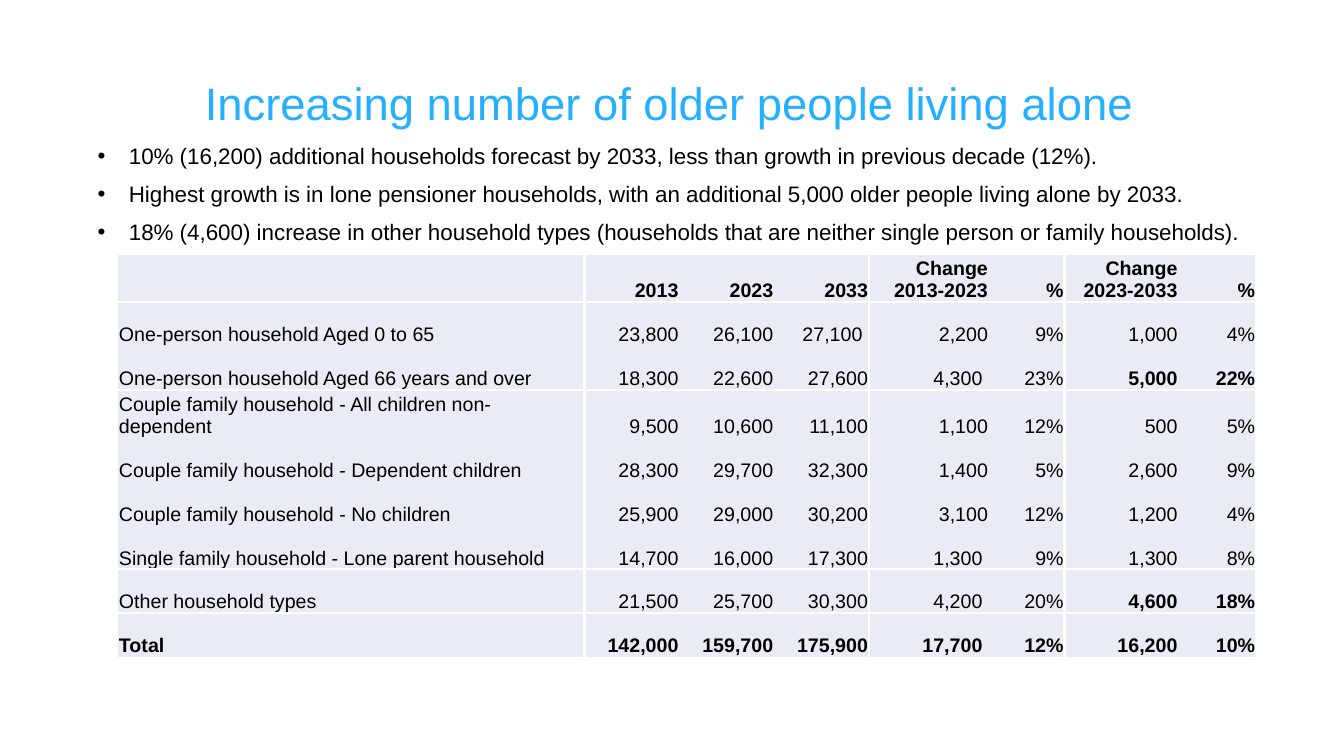
from lxml import etree
from pptx import Presentation
from pptx.dml.color import RGBColor
from pptx.enum.text import MSO_ANCHOR, PP_ALIGN
from pptx.oxml.ns import qn
from pptx.util import Inches, Pt

LEFT, CENTER, RIGHT = PP_ALIGN.LEFT, PP_ALIGN.CENTER, PP_ALIGN.RIGHT
MIDDLE, BOTTOM = MSO_ANCHOR.MIDDLE, MSO_ANCHOR.BOTTOM

FONT = "Arial"
BLACK, WHITE, BLUE, CELL_FILL = "000000", "FFFFFF", "24AFFF", "E9EBF5"

TITLE = "Increasing number of older people living alone"
BULLETS = [
    "10% (16,200) additional households forecast by 2033, less than growth in previous decade (12%).",
    "Highest growth is in lone pensioner households, with an additional 5,000 older people living alone by 2033.",
    "18% (4,600) increase in other household types (households that are neither single person or family households).",
]
HOUSEHOLDS = [
    ["", "2013", "2023", "2033", "Change 2013-2023", "%", "Change 2023-2033", "%"],
    ["One-person household Aged 0 to 65",
     "23,800", "26,100", "27,100 ", "2,200", "9%", "1,000", "4%"],
    ["One-person household Aged 66 years and over",
     "18,300", "22,600", "27,600", "4,300 ", "23%", "5,000", "22%"],
    ["Couple family household - All children non-dependent",
     "9,500", "10,600", "11,100", "1,100", "12%", "500", "5%"],
    ["Couple family household - Dependent children",
     "28,300", "29,700", "32,300", "1,400", "5%", "2,600", "9%"],
    ["Couple family household - No children",
     "25,900", "29,000", "30,200", "3,100", "12%", "1,200", "4%"],
    ["Single family household - Lone parent household",
     "14,700", "16,000", "17,300", "1,300 ", "9%", "1,300", "8%"],
    ["Other household types",
     "21,500", "25,700", "30,300", "4,200 ", "20%", "4,600", "18%"],
    ["Total",
     "142,000", "159,700", "175,900", "17,700 ", "12%", "16,200", "10%"],
]
COL_WIDTHS = [4.63, 0.94, 0.94, 0.94, 1.19, 0.75, 1.13, 0.77]
TABLE_HEIGHT, HEADER_HEIGHT = 3.95, 0.47

# Line widths in points, keyed by the index of the grid line
COL_RULES = {1: 2.25, 4: 2.25, 6: 2.25, 8: 2.25}
ROW_RULES = {0: 2.25, 1: 2.25, 3: 1.5, 7: 1.5, 8: 2.25}
BOLD_ROWS = {0, 8}
BOLD_CELLS = {(2, 6), (2, 7), (7, 6), (7, 7)}


def rgb(value):
    return RGBColor.from_string(value)


def add_run(p, text, size, color=BLACK, bold=False):
    r = p.add_run()
    r.text = text
    r.font.name = FONT
    r.font.size = Pt(size)
    r.font.bold = bold
    r.font.color.rgb = rgb(color)


def add_text_frame(s, left, top, width, height):
    box = s.shapes.add_textbox(Inches(left), Inches(top), Inches(width), Inches(height))
    box.text_frame.word_wrap = True
    return box.text_frame


def add_title(s, text):
    tf = add_text_frame(s, 0, 0.75, 13.27, 0.6)
    tf.vertical_anchor = MIDDLE
    p = tf.paragraphs[0]
    p.alignment = CENTER
    p.line_spacing = 0.9
    add_run(p, text, 32.4, BLUE)


def add_bullets(s, items):
    tf = add_text_frame(s, 0.87, 1.39, 12.4, 1.13)
    for i, item in enumerate(items):
        p = tf.add_paragraph() if i else tf.paragraphs[0]
        pPr = p._p.get_or_add_pPr()
        pPr.set("marL", str(Inches(0.31)))
        pPr.set("indent", str(Inches(-0.31)))
        etree.SubElement(pPr, qn("a:buFont"), typeface=FONT)
        etree.SubElement(pPr, qn("a:buChar"), char="•")
        p.line_spacing = 0.9
        if i:
            p.space_before = Pt(10)
        add_run(p, item, 16)


def set_border(cell, side, width):
    """Draw a white border, or none when width is None."""
    ln = etree.SubElement(cell._tc.get_or_add_tcPr(), qn("a:ln" + side))
    if width is None:
        etree.SubElement(ln, qn("a:noFill"))
        return
    ln.set("w", str(Pt(width)))
    fill = etree.SubElement(ln, qn("a:solidFill"))
    etree.SubElement(fill, qn("a:srgbClr"), val=WHITE)


def fill_cell(cell, row, col, text):
    set_border(cell, "L", COL_RULES.get(col))
    set_border(cell, "R", COL_RULES.get(col + 1))
    set_border(cell, "T", ROW_RULES.get(row))
    set_border(cell, "B", ROW_RULES.get(row + 1))
    cell.fill.solid()
    cell.fill.fore_color.rgb = rgb(CELL_FILL)
    cell.vertical_anchor = BOTTOM
    cell.margin_left = cell.margin_right = cell.margin_top = Inches(0.01)
    cell.margin_bottom = 0
    if text:
        p = cell.text_frame.paragraphs[0]
        p.alignment = RIGHT if col else LEFT
        bold = row in BOLD_ROWS or (row, col) in BOLD_CELLS
        add_run(p, text, 14, bold=bold)


def add_household_table(s, rows):
    frame = s.shapes.add_table(
        len(rows), len(COL_WIDTHS), Inches(1.17), Inches(2.52),
        Inches(sum(COL_WIDTHS)), Inches(TABLE_HEIGHT))
    table = frame.table
    for column, width in zip(table.columns, COL_WIDTHS):
        column.width = Inches(width)
    body_height = (TABLE_HEIGHT - HEADER_HEIGHT) / (len(rows) - 1)
    for i, values in enumerate(rows):
        table.rows[i].height = Inches(body_height if i else HEADER_HEIGHT)
        for j, text in enumerate(values):
            fill_cell(table.cell(i, j), i, j, text)


def main():
    prs = Presentation()
    prs.slide_width, prs.slide_height = Inches(13.33), Inches(7.5)
    s = prs.slides.add_slide(prs.slide_layouts[6])
    add_title(s, TITLE)
    add_household_table(s, HOUSEHOLDS)
    add_bullets(s, BULLETS)
    prs.save("out.pptx")


if __name__ == "__main__":
    main()
